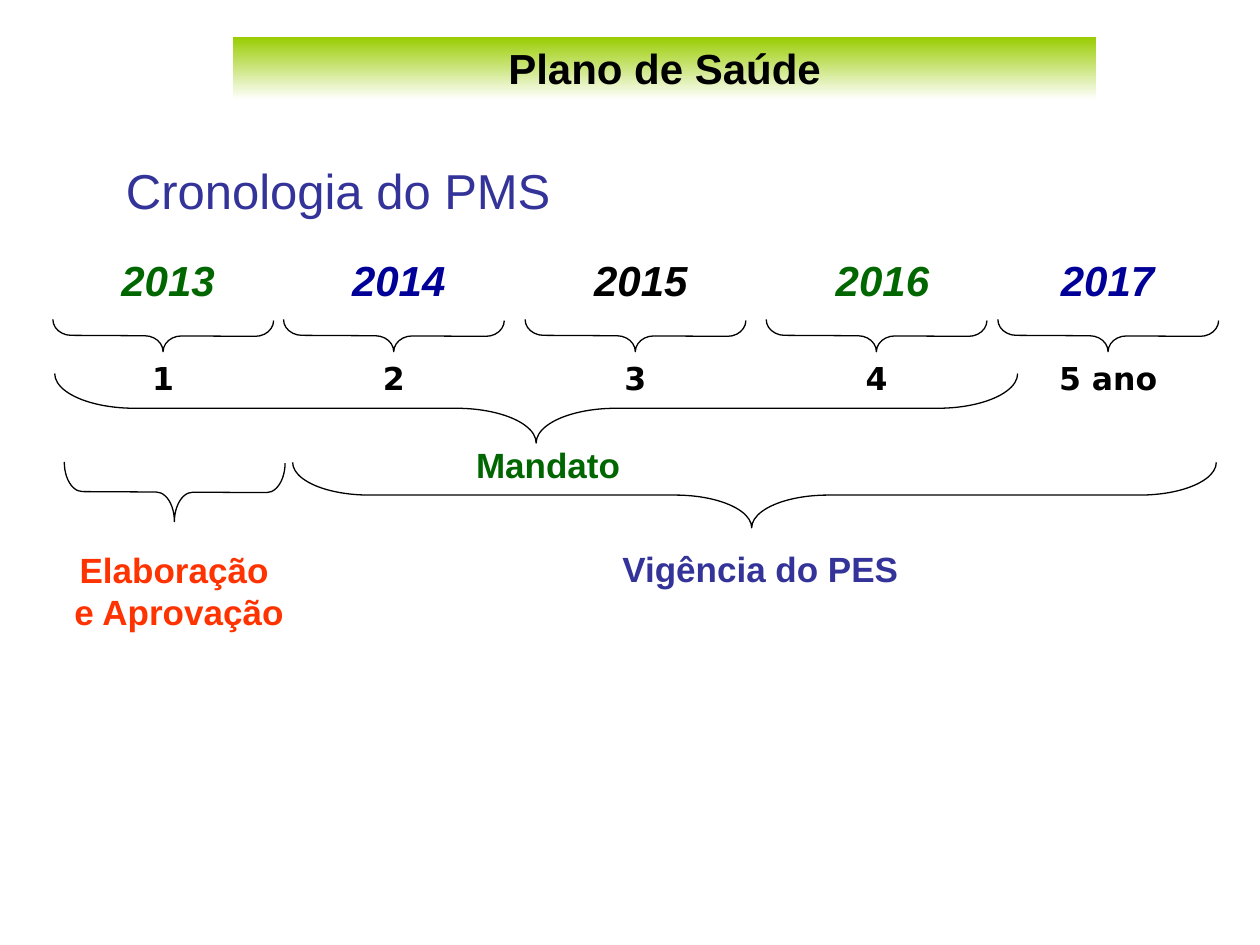
from pptx import Presentation
from pptx.dml.color import RGBColor
from pptx.enum.shapes import MSO_SHAPE as Kind
from pptx.enum.text import MSO_ANCHOR as Anchor, MSO_AUTO_SIZE as Auto, PP_ALIGN as Align
from pptx.util import Cm, Pt

BLACK, GREEN, NAVY, BLUE, RED = "000000", "006600", "000099", "333399", "FF3300"

# Year, colour, year centre, brace centre (cm), count, count width (cm)
YEARS = [
    ("2013", GREEN, 3.39, 3.29, "1", 0.97),
    ("2014", NAVY, 8.04, 7.94, "2", 0.97),
    ("2015", BLACK, 12.92, 12.81, "3", 0.97),
    ("2016", GREEN, 17.79, 17.67, "4", 0.97),
    ("2017", NAVY, 22.33, 22.34, "5 ano", 2.49),
]


def paint(hue):
    return RGBColor.from_string(hue)


def write(shape, lines, size, hue, face="Arial", bold=True, slant=False,
          align=Align.CENTER, anchor=Anchor.MIDDLE, wrap=True):
    frame = shape.text_frame
    frame.word_wrap = wrap
    frame.auto_size = Auto.SHAPE_TO_FIT_TEXT
    frame.vertical_anchor = anchor
    for i, line in enumerate(lines):
        para = frame.add_paragraph() if i else frame.paragraphs[0]
        para.alignment = align
        run = para.add_run()
        run.text = line
        font = run.font
        font.name, font.size = face, Pt(size)
        font.bold, font.italic = bold, slant
        font.color.rgb = paint(hue)


def label(slide, mid, top, width, height, lines, size, hue, **style):
    """Text box centred on mid."""
    box = slide.shapes.add_textbox(Cm(mid - width / 2), Cm(top), Cm(width), Cm(height))
    write(box, lines, size, hue, **style)


def brace(slide, x, y, span, depth, curve, tip=0.5, turn=270):
    """Brace centred on x, y, lying flat with its tip down."""
    shape = slide.shapes.add_shape(Kind.LEFT_BRACE, Cm(x - depth / 2), Cm(y - span / 2),
                                   Cm(depth), Cm(span))
    shape.rotation = turn
    shape.adjustments[0] = curve
    shape.adjustments[1] = tip
    shape.shadow.inherit = False
    shape.fill.background()
    shape.line.color.rgb = paint(BLACK)
    shape.line.width = Pt(0.75)


def banner(slide, text):
    bar = slide.shapes.add_shape(Kind.RECTANGLE, Cm(4.7), Cm(0.74), Cm(17.4), Cm(1.27))
    bar.shadow.inherit = False
    bar.line.fill.background()
    bar.fill.gradient()
    bar.fill.gradient_angle = 270
    for stop, hue in zip(bar.fill.gradient_stops, ("99CC00", "FFFFFF")):
        stop.color.rgb = paint(hue)
    write(bar, [text], 24, BLACK, anchor=Anchor.TOP)


def main():
    deck = Presentation()
    deck.slide_width, deck.slide_height = Cm(25.4), Cm(19.05)
    slide = deck.slides.add_slide(deck.slide_layouts[6])

    # Headings
    banner(slide, "Plano de Saúde")
    label(slide, 7.09, 3.12, 9.6, 1.45, ["Cronologia do PMS"], 28, BLUE,
          bold=False, align=Align.LEFT, anchor=Anchor.TOP)

    # Years with their braces and counts
    for year, hue, mid, x, count, width in YEARS:
        label(slide, mid, 5, 2.97, 1.27, [year], 24, hue, slant=True)
        brace(slide, x, 6.77, 4.45, 0.64, 0.58, turn=270.3)
        label(slide, x, 7.11, width, 1.02, [count], 18, BLACK,
              face="DejaVu Sans", wrap=False)

    # Term of office
    brace(slide, 10.81, 8.23, 19.41, 1.4, 1.15)
    label(slide, 11.05, 8.81, 6.15, 1.09, ["Mandato"], 20, GREEN)

    # Drafting and approval
    brace(slide, 3.52, 9.92, 4.45, 1.19, 0.31, turn=270.3)
    label(slide, 3.61, 10.92, 6.2, 1.96, ["Elaboração ", "e Aprovação"], 20, RED)

    # Plan in force
    brace(slide, 15.21, 9.98, 18.62, 1.32, 1.17, tip=0.497)
    label(slide, 15.33, 10.92, 8.46, 1.09, ["Vigência do PES"], 20, BLUE)

    deck.save("out.pptx")


if __name__ == "__main__":
    main()
